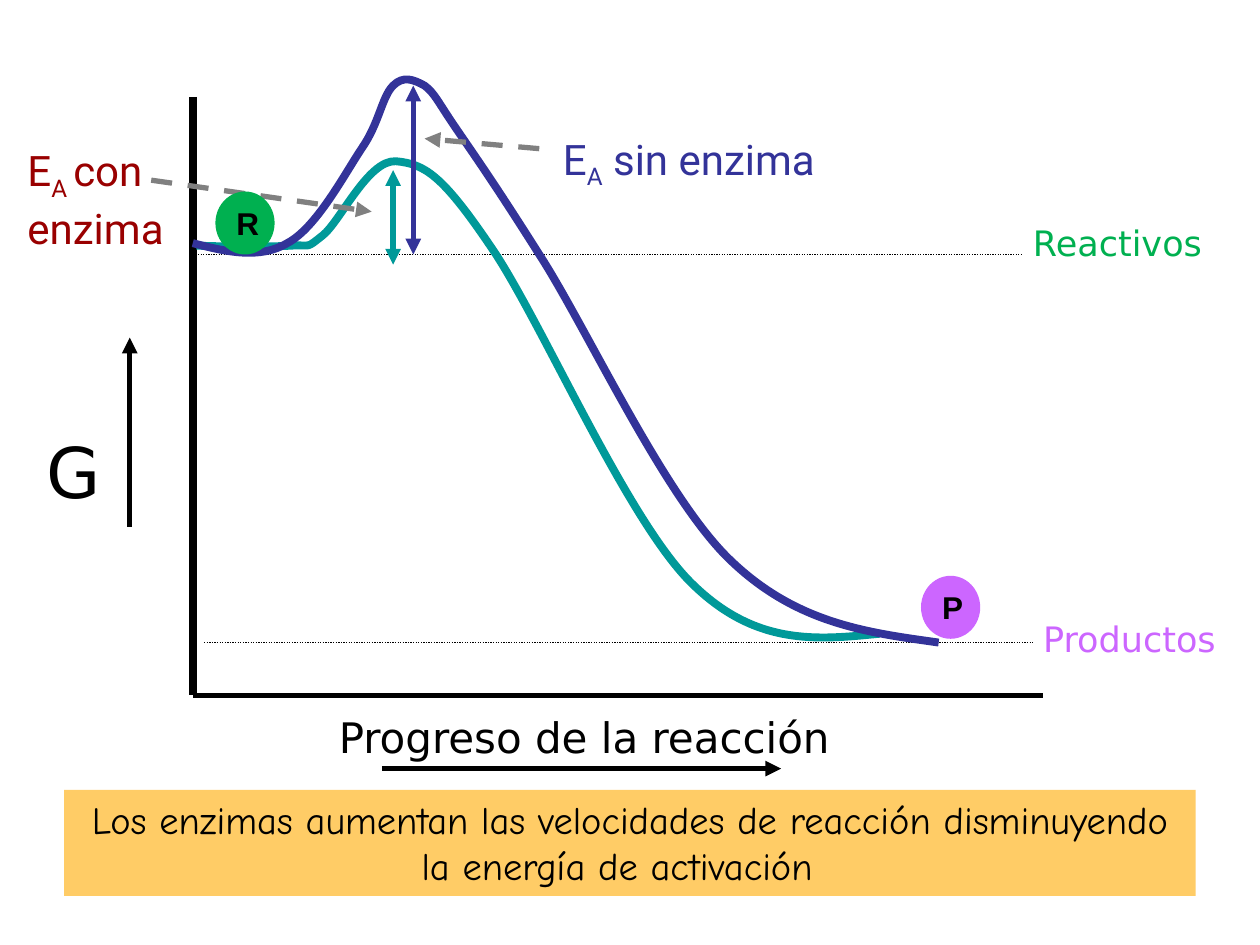
from lxml.etree import SubElement
from pptx import Presentation
from pptx.dml.color import RGBColor
from pptx.enum.dml import MSO_LINE
from pptx.enum.shapes import MSO_CONNECTOR, MSO_SHAPE
from pptx.enum.text import MSO_ANCHOR, PP_ALIGN
from pptx.oxml.ns import qn
from pptx.util import Pt

PX = 9144
BLACK = RGBColor(0x00, 0x00, 0x00)
GRAY = RGBColor(0x80, 0x80, 0x80)
TEAL = RGBColor(0x00, 0x99, 0x99)
NAVY = RGBColor(0x33, 0x33, 0x99)
RED = RGBColor(0x99, 0x00, 0x00)
GREEN = RGBColor(0x00, 0xB0, 0x50)
VIOLET = RGBColor(0xCC, 0x66, 0xFF)
SAND = RGBColor(0xFF, 0xCC, 0x66)

WITH_ENZYME = [(3, 68), (32, 69), (61, 69), (78, 68), (95, 67), (89, 71), (103, 60),
               (117, 49), (139, 0), (161, 1), (184, 3), (198, 12), (236, 68),
               (275, 124), (343, 283), (395, 335), (446, 386), (495, 381), (545, 376)]
WITHOUT_ENZYME = [(0, 133), (27, 140), (53, 146), (75, 133), (98, 121), (120, 79),
                  (134, 58), (148, 38), (150, 17), (159, 8), (167, 0), (175, 3),
                  (184, 8), (192, 14), (194, 20), (209, 42), (224, 64), (239, 85),
                  (275, 142), (312, 199), (373, 332), (425, 383), (478, 435),
                  (535, 442), (592, 450)]


def px(*values):
    return [v * PX for v in values]


def add_line(s, x1, y1, x2, y2, color, width, dash=None, ends=()):
    c = s.shapes.add_connector(MSO_CONNECTOR.STRAIGHT, *px(x1, y1, x2, y2))
    c.line.color.rgb = color
    c.line.width = Pt(width)
    if dash:
        c.line.dash_style = dash
    ln = c.line._get_or_add_ln()
    for end in ends:
        SubElement(ln, qn(f"a:{end}"), type="triangle")
    SubElement(c._element.spPr, qn("a:effectLst"))


def add_label(s, x, y, w, h, parts, size, font, color):
    tf = s.shapes.add_textbox(*px(x, y, w, h)).text_frame
    tf.word_wrap = True
    p = tf.paragraphs[0]
    p.font.size = Pt(size)
    p.font.name = font
    p.font.color.rgb = color
    for i, text in enumerate(parts):
        r = p.add_run()
        r.text = text
        if i % 2:
            r.font._element.set("baseline", "-25000")


def add_filled(s, kind, x, y, w, h, fill, text, size, font, anchor, bold=False):
    sp = s.shapes.add_shape(kind, *px(x, y, w, h))
    sp.shadow.inherit = False
    sp.fill.solid()
    sp.fill.fore_color.rgb = fill
    sp.line.fill.background()
    tf = sp.text_frame
    tf.word_wrap = True
    tf.vertical_anchor = anchor
    p = tf.paragraphs[0]
    p.text = text
    p.alignment = PP_ALIGN.CENTER
    p.font.size = Pt(size)
    p.font.name = font
    p.font.bold = bold
    p.font.color.rgb = BLACK


def add_curve(s, x, y, points, color):
    pts = [px(x + dx, y + dy) for dx, dy in points]
    fb = s.shapes.build_freeform(*pts[0])
    fb.add_line_segments(pts[1:], close=False)
    sp = fb.convert_to_shape()
    outline = next(sp._element.iter(qn("a:path")))
    segments = outline.findall(qn("a:lnTo"))
    for i in range(0, len(segments), 3):
        bend = SubElement(outline, qn("a:cubicBezTo"))
        for segment in segments[i:i + 3]:
            bend.append(segment[0])
            outline.remove(segment)
    sp.shadow.inherit = False
    sp.fill.background()
    sp.line.color.rgb = color
    sp.line.width = Pt(4.5)


def add_axes(s, x, y, w, h):
    add_line(s, x, y, x, y + h, BLACK, 4.5)
    add_line(s, x, y + h, x + w, y + h, BLACK, 3)
    add_label(s, x - 126, y + 258, 61, 77, ["G"], 40, "DejaVu Sans", BLACK)
    add_line(s, x - 50, y + 341, x - 50, y + 191, BLACK, 3, ends=["tailEnd"])
    add_label(s, x + 106, y + h + 8, 425, 50, ["Progreso de la reacción"],
              24, "DejaVu Sans", BLACK)
    add_line(s, x + 150, y + h + 58, x + 467, y + h + 58, BLACK, 3, ends=["tailEnd"])


def add_levels(s, x, y):
    for dx, dy, w, rise, text, text_w, color in [
            (0, 0, 659, 31, "Reactivos", 183, GREEN),
            (9, 308, 658, 25, "Productos", 194, VIOLET)]:
        add_line(s, x + dx, y + dy, x + dx + w, y + dy, BLACK, 0.75,
                 MSO_LINE.ROUND_DOT)
        add_label(s, x + dx + w - 2, y + dy - rise, text_w, 43, [text],
                  20, "DejaVu Sans", color)


def add_energies(s, x, y):
    both = ["headEnd", "tailEnd"]
    add_curve(s, x, y + 67, WITH_ENZYME, TEAL)
    add_line(s, x + 159, y + 75, x + 159, y + 150, TEAL, 3, ends=both)
    add_label(s, x - 141, y + 50, 150, 90, ["E", "A ", "con enzima"],
              24, "Roboto", RED)
    add_curve(s, x, y, WITHOUT_ENZYME, NAVY)
    add_line(s, x + 175, y + 8, x + 175, y + 142, NAVY, 3, ends=both)
    add_label(s, x + 284, y + 41, 294, 50, ["E", "A", " sin enzima"],
              24, "Roboto", NAVY)
    for x1, y1, x2, y2 in [(-33, 83, 142, 108), (275, 58, 184, 50)]:
        add_line(s, x + x1, y + y1, x + x2, y + y2, GRAY, 3,
                 MSO_LINE.DASH, ["tailEnd"])


def add_states(s, x, y):
    for dx, dy, text, fill in [(0, 0, "R", GREEN), (560, 305, "P", VIOLET)]:
        add_filled(s, MSO_SHAPE.OVAL, x + dx, y + dy, 47, 50, fill, text,
                   18, "Arial", MSO_ANCHOR.MIDDLE, True)


def main():
    prs = Presentation()
    prs.slide_width, prs.slide_height = px(1000, 750)
    s = prs.slides.add_slide(prs.slide_layouts[6])
    add_filled(s, MSO_SHAPE.RECTANGLE, 51, 627, 898, 84, SAND,
               "Los enzimas aumentan las velocidades de reacción disminuyendo "
               "la energía de activación  ", 22, "Comic Neue", MSO_ANCHOR.TOP)
    add_axes(s, 153, 77, 675, 475)
    add_levels(s, 153, 202)
    add_energies(s, 153, 60)
    add_states(s, 171, 152)
    prs.save("out.pptx")


if __name__ == "__main__":
    main()
